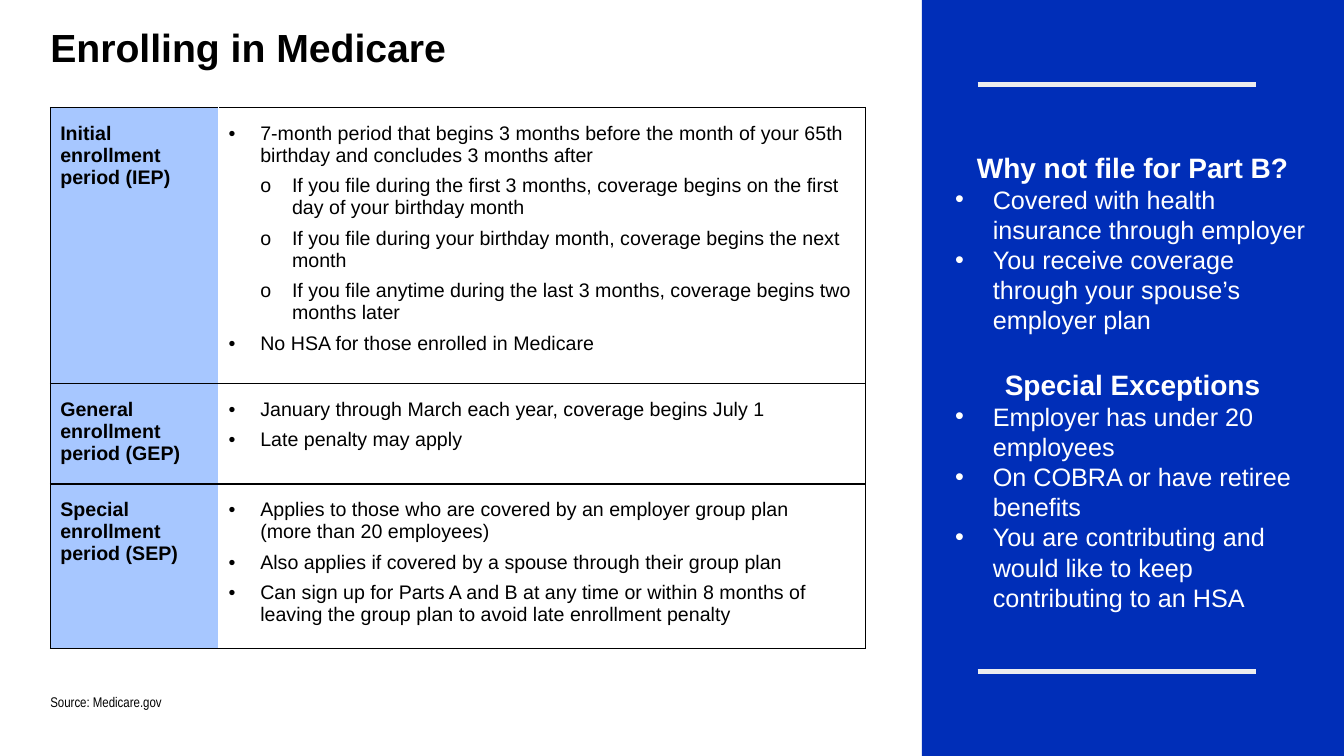
from pptx import Presentation
from pptx.dml.color import RGBColor
from pptx.enum.shapes import MSO_CONNECTOR as Link, MSO_SHAPE as Kind
from pptx.enum.text import MSO_ANCHOR as Anchor, PP_ALIGN as Align
from pptx.oxml import parse_xml
from pptx.oxml.ns import nsdecls
from pptx.util import Cm, Pt

BLACK, WHITE, BLUE, PALE, GREY = "000000", "FFFFFF", "002EB8", "A7C7FF", "ECEDEE"

# Each period: name, row height, points as (level, text)
PERIODS = [
    ("Initial enrollment period (IEP)", 6.6, [
        (0, "7-month period that begins 3 months before the month of your 65th birthday and concludes 3 months after"),
        (1, "If you file during the first 3 months, coverage begins on the first day of your birthday month"),
        (1, "If you file during your birthday month, coverage begins the next month"),
        (1, "If you file anytime during the last 3 months, coverage begins two months later"),
        (0, "No HSA for those enrolled in Medicare")]),
    ("General enrollment period (GEP)", 2.44, [
        (0, "January through March each year, coverage begins July 1"),
        (0, "Late penalty may apply")]),
    ("Special enrollment period (SEP)", 3.97, [
        (0, "Applies to those who are covered by an employer group plan \n(more than 20 employees)"),
        (0, "Also applies if covered by a spouse through their group plan"),
        (0, "Can sign up for Parts A and B at any time or within 8 months of "
            "leaving the group plan to avoid late enrollment penalty")]),
]
REASONS = [
    ("Why not file for Part B?", [
        "Covered with health insurance through employer",
        "You receive coverage through your spouse’s employer plan"]),
    ("Special Exceptions", [
        "Employer has under 20 employees",
        "On COBRA or have retiree benefits",
        "You are contributing and would like to keep contributing to an HSA"]),
]


def color(code):
    return RGBColor.from_string(code)


class Page:
    def __init__(self, slide, font="Arial"):
        self.shapes = slide.shapes
        self.font = font

    def text(self, para, words, size, ink=BLACK, bold=False, font=None):
        """Add the words as runs, with a line break at each newline."""
        for i, part in enumerate(words.split("\n")):
            if i:
                para.add_line_break()
            run = para.add_run()
            run.text = part
            run.font.name = font or self.font
            run.font.size = Pt(size)
            run.font.bold = bold
            run.font.color.rgb = color(ink)

    def bullet(self, para, mark, indent, level=0, ink=BLACK):
        para.level = level
        props = para._p.get_or_add_pPr()
        props.set("marL", str(Cm(indent * (level + 1))))
        props.set("indent", str(-Cm(indent)))
        for xml in (f'<a:buClr {nsdecls("a")}><a:srgbClr val="{ink}"/></a:buClr>',
                    f'<a:buFont {nsdecls("a")} typeface="{self.font}"/>',
                    f'<a:buChar {nsdecls("a")} char="{mark}"/>'):
            props.append(parse_xml(xml))

    def box(self, x, y, w, h, anchor=Anchor.TOP, pad=(0, 0)):
        frame = self.shapes.add_textbox(Cm(x), Cm(y), Cm(w), Cm(h)).text_frame
        frame.word_wrap = True
        frame.vertical_anchor = anchor
        frame.margin_left = frame.margin_right = Cm(pad[0])
        frame.margin_top = frame.margin_bottom = Cm(pad[1])
        return frame

    def panel(self, x, y, w, h, fill):
        rect = self.shapes.add_shape(Kind.RECTANGLE, Cm(x), Cm(y), Cm(w), Cm(h))
        rect.shadow.inherit = False
        rect.fill.solid()
        rect.fill.fore_color.rgb = color(fill)
        rect.line.fill.background()

    def rule(self, x, y, w, ink, width):
        line = self.shapes.add_connector(Link.STRAIGHT, Cm(x), Cm(y), Cm(x + w), Cm(y))
        line.line.color.rgb = color(ink)
        line.line.width = Pt(width)
        line._element.spPr.append(parse_xml(f'<a:effectLst {nsdecls("a")}/>'))

    def cell(self, cell, fill, left, right):
        """Set borders, fill and margins, and return the text frame."""
        props = cell._tc.get_or_add_tcPr()
        for side, ink in zip("LRTB", (left, right, BLACK, BLACK)):
            props.append(parse_xml(
                f'<a:ln{side} {nsdecls("a")} w="{Pt(1)}"><a:solidFill>'
                f'<a:srgbClr val="{ink}"/></a:solidFill></a:ln{side}>'))
        cell.fill.solid()
        cell.fill.fore_color.rgb = color(fill)
        cell.margin_left = cell.margin_right = Cm(0.25)
        cell.margin_top = cell.margin_bottom = Cm(0.38)
        return cell.text_frame

    def table(self, x, y, widths, periods):
        high = sum(row[1] for row in periods)
        grid = self.shapes.add_table(len(periods), len(widths), Cm(x), Cm(y),
                                     Cm(sum(widths)), Cm(high)).table
        grid.first_row = grid.horz_banding = False
        for col, width in zip(grid.columns, widths):
            col.width = Cm(width)
        for r, (name, height, points) in enumerate(periods):
            grid.rows[r].height = Cm(height)
            head = self.cell(grid.cell(r, 0), PALE, BLACK, WHITE)
            self.text(head.paragraphs[0], name, 14, bold=True)
            body = self.cell(grid.cell(r, 1), WHITE, WHITE, BLACK)
            for i, (level, words) in enumerate(points):
                para = body.add_paragraph() if i else body.paragraphs[0]
                self.bullet(para, "•o"[level], 0.8, level)
                if i:
                    para.space_before = Pt(6)
                self.text(para, words, 14)

    def sidebar(self, x, y, w, h, groups):
        frame = self.box(x, y, w, h, Anchor.MIDDLE, (0.25, 0.13))
        for i, (title, points) in enumerate(groups):
            para = frame.add_paragraph() if i else frame.paragraphs[0]
            para.alignment = Align.CENTER
            if i:
                para.space_before = Pt(23)
            self.text(para, title, 20, WHITE, True)
            for words in points:
                para = frame.add_paragraph()
                self.bullet(para, "•", 0.95, ink=WHITE)
                self.text(para, words, 18, WHITE)


def main():
    deck = Presentation()
    deck.slide_width, deck.slide_height = Cm(33.87), Cm(19.05)
    page = Page(deck.slides.add_slide(deck.slide_layouts[6]))

    title = page.box(1.27, 0.58, 21, 1.2)
    page.text(title.paragraphs[0], "Enrolling in Medicare", 28, bold=True)
    page.table(1.27, 2.71, (4.24, 16.31), PERIODS)
    source = page.box(1.27, 16.41, 20, 1.5, Anchor.BOTTOM)
    page.text(source.paragraphs[0], "Source: Medicare.gov", 10, font="Arial Narrow")

    page.panel(23.23, 0, 10.64, 19.05, BLUE)
    for y in (2.13, 16.92):
        page.rule(24.64, y, 7.01, GREY, 3)
    page.sidebar(23.82, 3.58, 9.45, 12.06, REASONS)
    deck.save("out.pptx")


if __name__ == "__main__":
    main()
